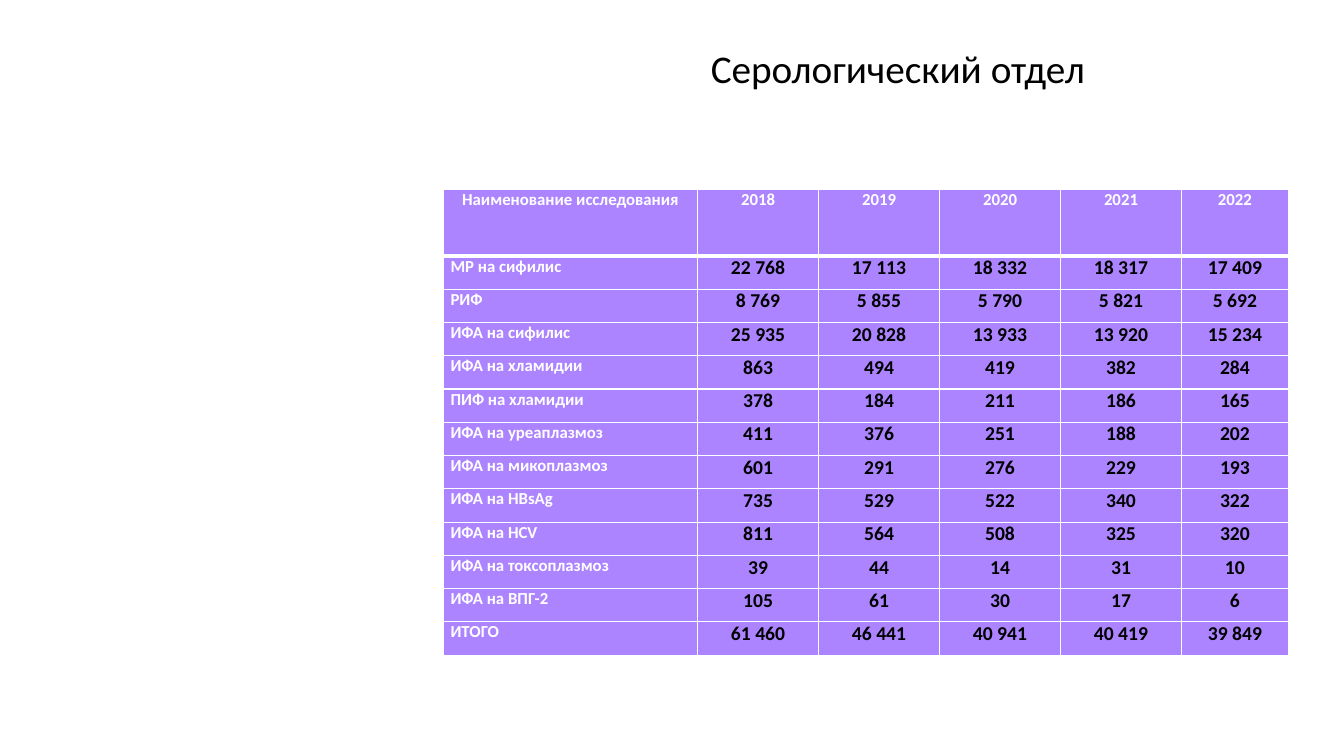
from lxml.etree import SubElement
from pptx import Presentation
from pptx.dml.color import RGBColor
from pptx.enum.text import MSO_ANCHOR as Anchor, PP_ALIGN as Align
from pptx.oxml import parse_xml
from pptx.oxml.ns import nsdecls, qn
from pptx.util import Inches, Pt

COLORS = {"cell": "9966FF", "light": "FFFFFF", "dark": "000000"}
FONT = "Calibri"
SLIDE_WIDTH, SLIDE_HEIGHT = 13.33, 7.5
FILL_OPACITY = 80

TITLE_BOX = (0.4043, 0.0533, 0.5274, 0.08)
TABLE_LEFT, TABLE_TOP = 0.33, 0.2507
YEAR_COLUMN, ROW = 1.2, 0.33
COLUMNS = [2.52] + [YEAR_COLUMN] * 4 + [1.06]

HEADER = ["Наименование исследования", "2018", "2019", "2020", "2021", "2022"]
TESTS = [
    ["МР на сифилис", "22 768", "17 113", "18 332", "18 317", "17 409"],
    ["РИФ", "8 769", "5 855", "5 790", "5 821", "5 692"],
    ["ИФА на сифилис", "25 935", "20 828", "13 933", "13 920", "15 234"],
    ["ИФА на хламидии", "863", "494", "419", "382", "284"],
    ["ПИФ на хламидии", "378", "184", "211", "186", "165"],
    ["ИФА на уреаплазмоз", "411", "376", "251", "188", "202"],
    ["ИФА на микоплазмоз", "601", "291", "276", "229", "193"],
    ["ИФА на HBsAg", "735", "529", "522", "340", "322"],
    ["ИФА на HCV", "811", "564", "508", "325", "320"],
    ["ИФА на токсоплазмоз", "39", "44", "14", "31", "10"],
    ["ИФА на ВПГ-2", "105", "61", "30", "17", "6"],
    ["ИТОГО", "61 460", "46 441", "40 941", "40 419", "39 849"],
]

CELL_FORMAT = {
    "margin_left": Inches(0.07), "margin_right": Inches(0.07),
    "margin_top": 0, "margin_bottom": 0, "vertical_anchor": Anchor.TOP,
}
HEADER_TEXT = {"size": 12, "color": "light", "align": Align.CENTER}
LABEL_TEXT = {"size": 12, "color": "light", "align": Align.LEFT}
VALUE_TEXT = {"size": 14, "color": "dark", "align": Align.CENTER}


def set_attributes(target, values):
    for name, value in values.items():
        setattr(target, name, value)


def share(x, y):
    return Inches(x * SLIDE_WIDTH), Inches(y * SLIDE_HEIGHT)


def format_paragraph(paragraph, size, color, align, bold=False, **spacing):
    set_attributes(paragraph, {"alignment": align, **spacing})
    set_attributes(paragraph.font, {"name": FONT, "size": Pt(size), "bold": bold})
    paragraph.font.color.rgb = RGBColor.from_string(COLORS[color])


def add_title(slide, text):
    title = slide.shapes.title
    left, top, width, height = TITLE_BOX
    title.left, title.top = share(left, top)
    title.width, title.height = share(width, height)
    title.text_frame.text = text
    set_attributes(title.text_frame, {"vertical_anchor": Anchor.MIDDLE, "word_wrap": True})
    format_paragraph(title.text_frame.paragraphs[0], 28, "dark", Align.CENTER,
                     line_spacing=0.9)


def set_borders(properties, widths):
    """Put the border lines, given as side and points, ahead of the cell fill."""
    for position, (side, points) in enumerate(widths.items()):
        properties.insert(position, parse_xml(
            f'<a:ln{side} {nsdecls("a")} w="{Pt(points)}"><a:solidFill>'
            f'<a:srgbClr val="{COLORS["light"]}"/></a:solidFill></a:ln{side}>'))


def fill_cell(cell, text, text_format, widths):
    cell.text = text
    set_attributes(cell, CELL_FORMAT)
    format_paragraph(cell.text_frame.paragraphs[0], **text_format, bold=True,
                     space_after=Pt(13.7))
    cell.fill.solid()
    cell.fill.fore_color.rgb = RGBColor.from_string(COLORS["cell"])
    properties = cell._tc.get_or_add_tcPr()
    color = properties.find(f'{qn("a:solidFill")}/{qn("a:srgbClr")}')
    SubElement(color, qn("a:alpha"), val=str(FILL_OPACITY * 1000))
    set_borders(properties, widths)


def add_results_table(slide):
    rows = [HEADER] + TESTS
    heights = [2 * ROW] + [ROW] * len(TESTS)
    table = slide.shapes.add_table(
        len(rows), len(COLUMNS), *share(TABLE_LEFT, TABLE_TOP),
        Inches(sum(COLUMNS)), Inches(sum(heights))).table
    for column, width in zip(table.columns, COLUMNS):
        column.width = Inches(width)
    for row, height in zip(table.rows, heights):
        row.height = Inches(height)
    for row_index, texts in enumerate(rows):
        widths = {"L": 1, "R": 1, "T": 3 if row_index == 1 else 1,
                  "B": 3 if row_index == 0 else 1}
        for column_index, text in enumerate(texts):
            body_format = VALUE_TEXT if column_index else LABEL_TEXT
            fill_cell(table.cell(row_index, column_index), text,
                      body_format if row_index else HEADER_TEXT, widths)


def main():
    presentation = Presentation()
    presentation.slide_width, presentation.slide_height = share(1, 1)
    slide = presentation.slides.add_slide(presentation.slide_layouts[5])
    add_title(slide, "Серологический отдел")
    add_results_table(slide)
    presentation.save("out.pptx")


if __name__ == "__main__":
    main()
